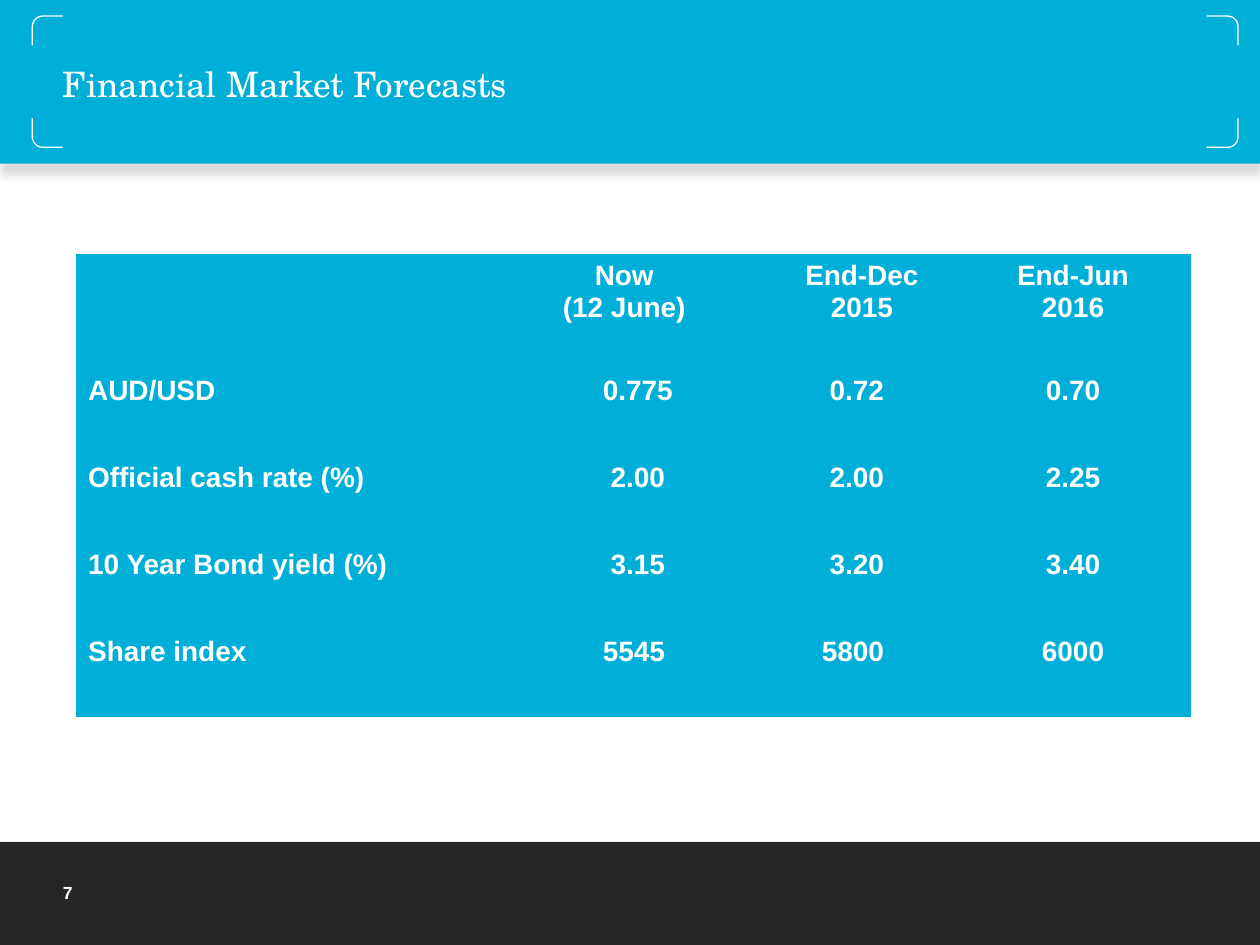
from dataclasses import dataclass

from lxml import etree
from pptx import Presentation
from pptx.dml.color import RGBColor
from pptx.enum.shapes import MSO_SHAPE
from pptx.enum.text import MSO_ANCHOR, PP_ALIGN
from pptx.oxml import parse_xml
from pptx.oxml.ns import nsdecls, qn
from pptx.util import Pt

RECT, ROUND = MSO_SHAPE.RECTANGLE, MSO_SHAPE.ROUNDED_RECTANGLE
MIDDLE = MSO_ANCHOR.MIDDLE
LEFT, CENTER = PP_ALIGN.LEFT, PP_ALIGN.CENTER
COLORS = {"blue": "00AFD7", "dark": "262626", "white": "FFFFFF"}
BODY_FONT, TITLE_FONT = "Arial", "TeX Gyre Schola"
INSET = 7.2
COL_WIDTHS = [211, 32.4, 124.6, 28.1, 106.6, 134.6]
ROW_HEIGHTS = [65.5] + [49.7] * 4


@dataclass
class Box:
    left: float
    top: float
    width: float
    height: float

    def lengths(self):
        return Pt(self.left), Pt(self.top), Pt(self.width), Pt(self.height)


@dataclass
class Entry:
    col: int
    span: int
    text: str
    align: PP_ALIGN = CENTER
    indent: float = 0


@dataclass
class Forecast:
    label: str
    values: tuple
    indents: tuple = (31.1, 22.2, 0)

    def entries(self):
        slots = zip((2, 3, 5), (1, 2, 1), self.values, self.indents)
        cells = [Entry(col, span, text, CENTER, indent) for col, span, text, indent in slots]
        return [Entry(0, 2, self.label, LEFT)] + cells


HEADER = [
    Entry(0, 1, ""),
    Entry(1, 3, "Now\n(12 June)", CENTER, 20),
    Entry(4, 1, "End-Dec\n2015"),
    Entry(5, 1, "End-Jun\n2016"),
]
FORECASTS = [
    Forecast("AUD/USD", ("0.775", "0.72", "0.70")),
    Forecast("Official cash rate (%)", ("2.00", "2.00", "2.25")),
    Forecast("10 Year Bond yield (%)", ("3.15", "3.20", "3.40")),
    Forecast("Share index", ("5545", "5800", "6000"), (26.7, 17.8, 0)),
]


def rgb(name: str) -> RGBColor:
    return RGBColor.from_string(COLORS[name])


def add_panel(shapes, box: Box, color: str, kind=RECT):
    sp = shapes.add_shape(kind, *box.lengths())
    sp.shadow.inherit = False
    sp.fill.solid()
    sp.fill.fore_color.rgb = rgb(color)
    sp.line.fill.background()
    return sp


def add_drop_shadow(sp) -> None:
    effects = sp.element.spPr.find(qn("a:effectLst"))
    shadow = parse_xml(
        f'<a:outerShdw {nsdecls("a")} blurRad="63500" dist="63500" dir="5400000"'
        ' algn="t" rotWithShape="0"/>'
    )
    color = etree.SubElement(shadow, qn("a:srgbClr"), val="000000")
    etree.SubElement(color, qn("a:alpha"), val="15000")
    effects.append(shadow)


def style_text(tf, size: float, font: str, bold: bool, align: PP_ALIGN = LEFT) -> None:
    for p in tf.paragraphs:
        p.alignment = align
        p.font.size = Pt(size)
        for r in p.runs:
            r.font.size = Pt(size)
            r.font.name = font
            r.font.bold = bold
            r.font.color.rgb = rgb("white")


def add_text(slide, box: Box, text: str, size: float, font: str, bold: bool) -> None:
    tf = slide.shapes.add_textbox(*box.lengths()).text_frame
    tf.word_wrap = True
    tf.vertical_anchor = MIDDLE
    tf.text = text
    style_text(tf, size, font, bold)


def add_corner_frame(slide) -> None:
    group = slide.shapes.add_group_shape()
    frame = add_panel(group.shapes, Box(18.5, 9.2, 689, 75), "blue", ROUND)
    frame.adjustments[0] = 0.08
    frame.line.color.rgb = rgb("white")
    frame.line.width = Pt(0.75)
    for box in (Box(11, 26, 702, 41.5), Box(36, 4.5, 653.5, 85)):
        add_panel(group.shapes, box, "blue")


def fill_cell(cell) -> None:
    cell.fill.solid()
    cell.fill.fore_color.rgb = rgb("blue")
    props = cell._tc.get_or_add_tcPr()
    for i, side in enumerate(("lnL", "lnR", "lnT", "lnB")):
        border = parse_xml(f'<a:{side} {nsdecls("a")} w="0"><a:noFill/></a:{side}>')
        props.insert(i, border)


def add_forecast_table(slide) -> None:
    rows = [HEADER] + [forecast.entries() for forecast in FORECASTS]
    box = Box(43.2, 145.4, sum(COL_WIDTHS), sum(ROW_HEIGHTS))
    table = slide.shapes.add_table(len(rows), len(COL_WIDTHS), *box.lengths()).table
    table.first_row = False
    table.horz_banding = False
    for column, width in zip(table.columns, COL_WIDTHS):
        column.width = Pt(width)
    for row, height in zip(table.rows, ROW_HEIGHTS):
        row.height = Pt(height)
    for cell in table.iter_cells():
        fill_cell(cell)
    for i, entries in enumerate(rows):
        for entry in entries:
            cell = table.cell(i, entry.col)
            if entry.span > 1:
                cell.merge(table.cell(i, entry.col + entry.span - 1))
            cell.margin_left = Pt(INSET + entry.indent)
            cell.text_frame.text = entry.text
            style_text(cell.text_frame, 16, BODY_FONT, True, entry.align)


def main() -> None:
    prs = Presentation()
    prs.slide_width, prs.slide_height = Pt(720), Pt(540)
    slide = prs.slides.add_slide(prs.slide_layouts[6])
    add_panel(slide.shapes, Box(0, 481, 720, 59), "dark")
    banner = add_panel(slide.shapes, Box(0, 0, 720, 93.6), "blue")
    add_drop_shadow(banner)
    add_corner_frame(slide)
    add_text(slide, Box(28.8, 500.5, 83.5, 19.4), "7", 10, BODY_FONT, True)
    add_text(slide, Box(28.8, 31.7, 661, 31.7), "Financial Market Forecasts", 20, TITLE_FONT, False)
    add_forecast_table(slide)
    prs.save("out.pptx")


if __name__ == "__main__":
    main()
